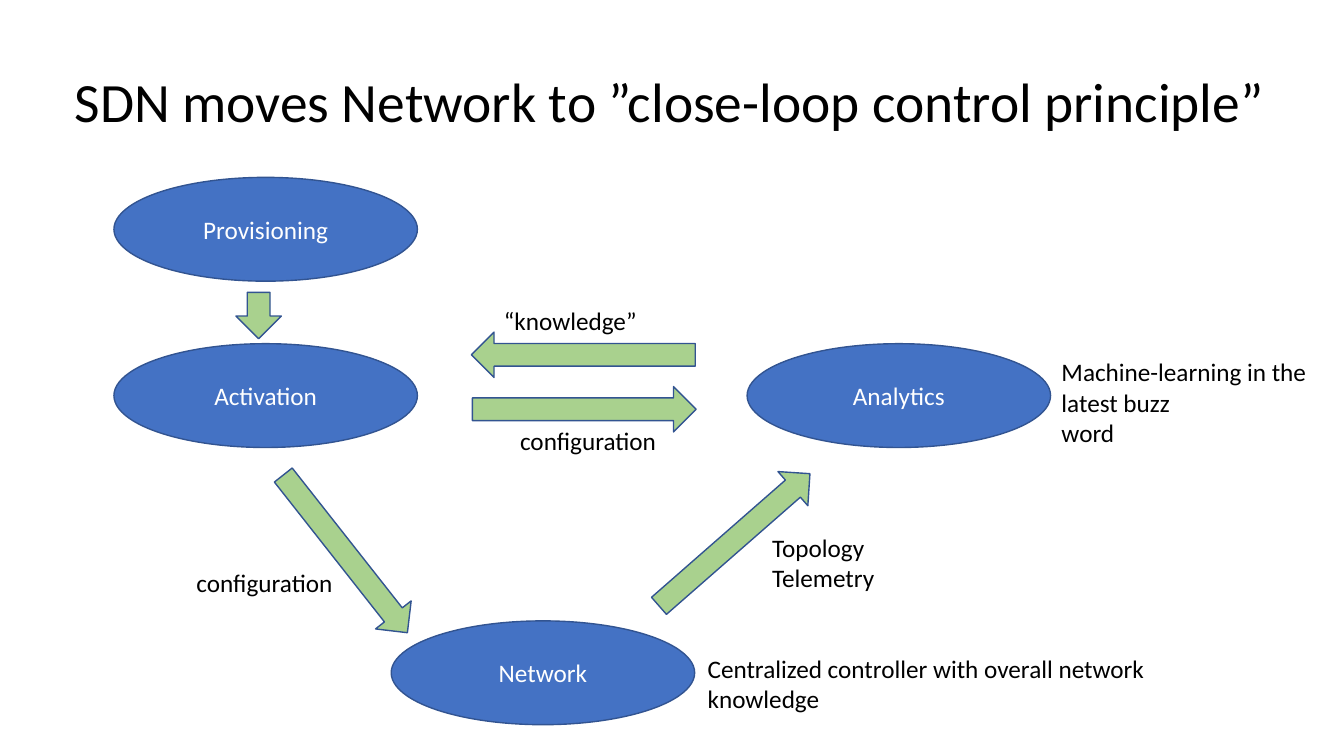
from dataclasses import dataclass

from pptx import Presentation, util as u
from pptx.dml.color import RGBColor
from pptx.enum import shapes, text

PX = 9144  # EMU per px, 100 px to the inch


@dataclass(frozen=True)
class Theme:
    font: str = "Calibri"
    head: float = 39.6
    body: float = 18
    ink: str = "000000"
    pale: str = "FFFFFF"
    node: str = "4472C4"
    arrow: str = "A9D18E"
    edge: str = "325491"


THEME = Theme()
NODE_W, NODE_H = 301, 103
ARROW_W = 45
LEFT_X, MID_Y = 113, 341

NODES = [
    ("Network", 388, 616),
    ("Analytics", 741, MID_Y),
    ("Activation", LEFT_X, MID_Y),
    ("Provisioning", LEFT_X, 176),
]
# left, top, length, rotation of an upward arrow
ARROWS = [
    (706, 436, 199, 48.8),
    (556, 241, 222, 270),
    (557, 295, 222, 90),
    (320, 450, 199, 141.8),
    (234, 290, 46, 180),
]
# left, top, width, height, lines
NOTES = [
    (692, 643, 464, 71, ["Centralized controller with overall network knowledge"]),
    (756, 523, 206, 71, ["Topology", "Telemetry"]),
    (490, 298, 186, 40, ["“knowledge”"]),
    (506, 417, 186, 40, ["configuration"]),
    (185, 558, 186, 40, ["configuration"]),
    (1043, 349, 266, 101, ["Machine-learning in the latest buzz", "word"]),
]


def px(*vals):
    return [u.Emu(v * PX) for v in vals]


def rgb(code):
    return RGBColor.from_string(code)


def add_run(para, words, size, color):
    run = para.add_run()
    run.text = words
    run.font.name = THEME.font
    run.font.size = u.Pt(size)
    run.font.color.rgb = rgb(color)


def add_title(slide, words):
    title = slide.shapes.title
    title.left, title.top, title.width, title.height = px(64, 50, 1217, 107)
    frame = title.text_frame
    frame.auto_size = text.MSO_AUTO_SIZE.NONE
    frame.vertical_anchor = text.MSO_ANCHOR.MIDDLE
    para = frame.paragraphs[0]
    para.alignment = text.PP_ALIGN.LEFT
    para.line_spacing = 0.9
    add_run(para, words, THEME.head, THEME.ink)


def add_form(slide, kind, box, fill):
    form = slide.shapes.add_shape(kind, *px(*box))
    form.shadow.inherit = False
    form.fill.solid()
    form.fill.fore_color.rgb = rgb(fill)
    form.line.color.rgb = rgb(THEME.edge)
    form.line.width = u.Pt(1)
    return form


def add_node(slide, label, x, y):
    box = (x, y, NODE_W, NODE_H)
    node = add_form(slide, shapes.MSO_SHAPE.OVAL, box, THEME.node)
    frame = node.text_frame
    frame.vertical_anchor = text.MSO_ANCHOR.MIDDLE
    para = frame.paragraphs[0]
    para.alignment = text.PP_ALIGN.CENTER
    add_run(para, label, THEME.body, THEME.pale)


def add_arrow(slide, x, y, length, turn):
    box = (x, y, ARROW_W, length)
    arrow = add_form(slide, shapes.MSO_SHAPE.UP_ARROW, box, THEME.arrow)
    arrow.rotation = turn


def add_note(slide, x, y, w, h, lines):
    frame = slide.shapes.add_textbox(*px(x, y, w, h)).text_frame
    frame.word_wrap = True
    frame.auto_size = text.MSO_AUTO_SIZE.SHAPE_TO_FIT_TEXT
    for i, line in enumerate(lines):
        para = frame.add_paragraph() if i else frame.paragraphs[0]
        add_run(para, line, THEME.body, THEME.ink)


def main():
    deck = Presentation()
    deck.slide_width, deck.slide_height = px(1333, 750)
    slide = deck.slides.add_slide(deck.slide_layouts[5])
    add_title(slide, "SDN moves Network to ”close-loop control principle”")
    for node in NODES:
        add_node(slide, *node)
    for arrow in ARROWS:
        add_arrow(slide, *arrow)
    for note in NOTES:
        add_note(slide, *note)
    deck.save("out.pptx")


if __name__ == "__main__":
    main()
